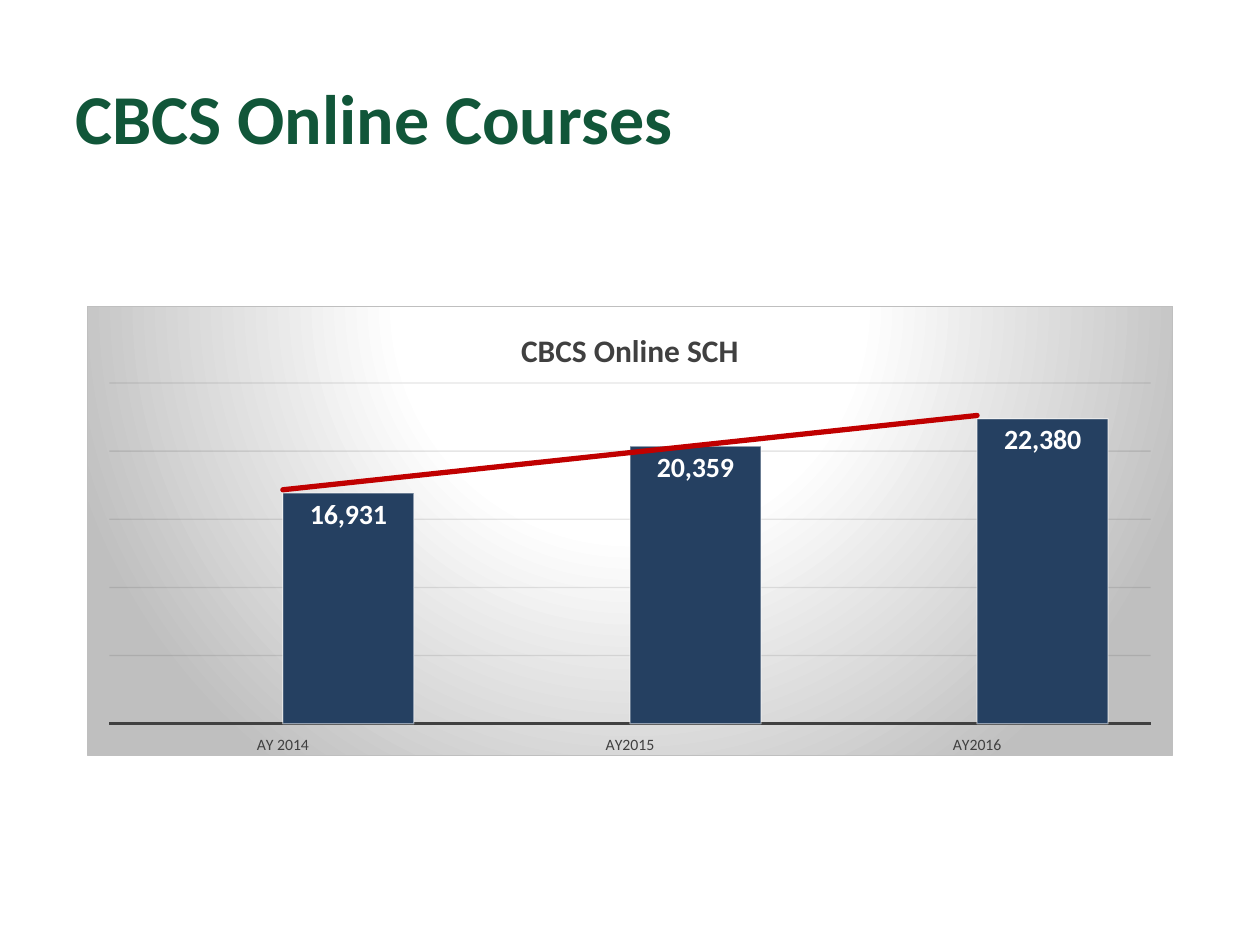
"""Build a slide with a column chart of online credit hours and its linear trend."""
from lxml import etree
from pptx import Presentation
from pptx.chart.data import CategoryChartData
from pptx.dml.color import RGBColor
from pptx.enum.chart import XL_CHART_TYPE, XL_LABEL_POSITION, XL_TICK_LABEL_POSITION, XL_TICK_MARK
from pptx.enum.text import MSO_ANCHOR, PP_ALIGN
from pptx.oxml import parse_xml
from pptx.oxml.ns import nsdecls, qn
from pptx.util import Inches, Pt

COLUMN = XL_CHART_TYPE.COLUMN_CLUSTERED
INSIDE_END = XL_LABEL_POSITION.INSIDE_END
LABELS_LOW = XL_TICK_LABEL_POSITION.LOW
NO_TICK = XL_TICK_MARK.NONE
MIDDLE = MSO_ANCHOR.MIDDLE
LEFT = PP_ALIGN.LEFT
FONT = "Calibri"
COLORS = {
    "title": "115639", "text": "404040", "grid": "0D0D0D", "trend": "C00000",
    "blue": "4F81BD", "navy": "254061", "white": "FFFFFF", "gray": "BFBFBF",
}


def style_font(font, size, color, bold=False):
    font.name = FONT
    font.size = Pt(size)
    font.bold = bold
    font.color.rgb = RGBColor.from_string(COLORS[color])


def style_line(line, width, color, opacity=100):
    line.width = Pt(width)
    line.color.rgb = RGBColor.from_string(COLORS[color])
    color_element = line.fill._xPr.find(".//" + qn("a:srgbClr"))
    etree.SubElement(color_element, qn("a:alpha"), val=str(opacity * 1000))


presentation = Presentation()
presentation.slide_width = Inches(10)
presentation.slide_height = Inches(7.5)
slide = presentation.slides.add_slide(presentation.slide_layouts[5])

title = slide.shapes.title
title.left, title.top = Inches(0.5), Inches(0.3)
title.width, title.height = Inches(9), Inches(1.25)
title.text_frame.text = "CBCS Online Courses"
title.text_frame.vertical_anchor = MIDDLE
title_paragraph = title.text_frame.paragraphs[0]
title_paragraph.alignment = LEFT
style_font(title_paragraph.font, 40, "title", True)

chart_data = CategoryChartData()
chart_data.categories = ["AY 2014", "AY2015", "AY2016"]
chart_data.add_series("Series 1", [None, None, None])
chart_data.add_series("Series 2", [16931, 20359, 22380])
chart = slide.shapes.add_chart(
    COLUMN, Inches(0.69), Inches(2.43), Inches(8.62), Inches(3.57), chart_data
).chart
chart.has_legend = False
chart.font.name = FONT
chart.font.size = Pt(10)
chart.has_title = True
chart.chart_title.include_in_layout = False
chart.chart_title.text_frame.text = "CBCS Online SCH"
style_font(chart.chart_title.text_frame.paragraphs[0].font, 18, "text", True)

category_axis = chart.category_axis
category_axis.major_tick_mark = NO_TICK
category_axis.minor_tick_mark = NO_TICK
category_axis.tick_label_position = LABELS_LOW
style_font(category_axis.tick_labels.font, 9, "text")
style_line(category_axis.format.line, 1.5, "text")

value_axis = chart.value_axis
value_axis.visible = False
value_axis.minimum_scale, value_axis.maximum_scale = 0, 25000
value_axis.major_unit = 5000
value_axis.has_major_gridlines = True
style_line(value_axis.major_gridlines.format.line, 0.75, "grid", 10)

plot = chart.plots[0]
plot.gap_width = 65
plot.overlap = 0
plot.vary_by_categories = False
for series, color, label_size in zip(plot.series, ("blue", "navy"), (9, 16)):
    series.format.fill.solid()
    series.format.fill.fore_color.rgb = RGBColor.from_string(COLORS[color])
    style_line(series.format.line, 0.75, "white", 50)
    labels = series.data_labels
    labels.show_value = True
    labels.position = INSIDE_END
    labels.number_format = "#,##0"
    labels.number_format_is_linked = False
    style_font(labels.font, label_size, "white", True)

trend = parse_xml(
    f'<c:trendline {nsdecls("c", "a")}><c:spPr><a:ln w="{Pt(3)}" cap="rnd"><a:solidFill>'
    f'<a:srgbClr val="{COLORS["trend"]}"/></a:solidFill></a:ln></c:spPr>'
    '<c:trendlineType val="linear"/><c:dispRSqr val="0"/><c:dispEq val="0"/></c:trendline>'
)
plot.series[1]._element.find(qn("c:cat")).addprevious(trend)

stops = "".join(
    f'<a:gs pos="{position * 1000}"><a:srgbClr val="{COLORS[color]}"/></a:gs>'
    for position, color in ((0, "white"), (39, "white"), (100, "gray"))
)
background = parse_xml(
    f'<c:spPr {nsdecls("c", "a")}><a:gradFill><a:gsLst>{stops}</a:gsLst><a:path path="circle">'
    '<a:fillToRect l="50000" t="-80000" r="50000" b="180000"/></a:path></a:gradFill>'
    f'<a:ln w="{Pt(0.75)}"><a:solidFill><a:srgbClr val="{COLORS["gray"]}"/></a:solidFill></a:ln></c:spPr>'
)
chart._chartSpace.find(qn("c:txPr")).addprevious(background)

layout = parse_xml(
    f'<c:layout {nsdecls("c")}><c:manualLayout><c:layoutTarget val="inner"/>'
    '<c:xMode val="edge"/><c:yMode val="edge"/><c:x val="0.02"/><c:y val="0.17"/>'
    '<c:w val="0.96"/><c:h val="0.76"/></c:manualLayout></c:layout>'
)
plot_area = chart._chartSpace.chart.plotArea
for old_layout in plot_area.findall(qn("c:layout")):
    plot_area.remove(old_layout)
plot_area.insert(0, layout)

presentation.save("out.pptx")
